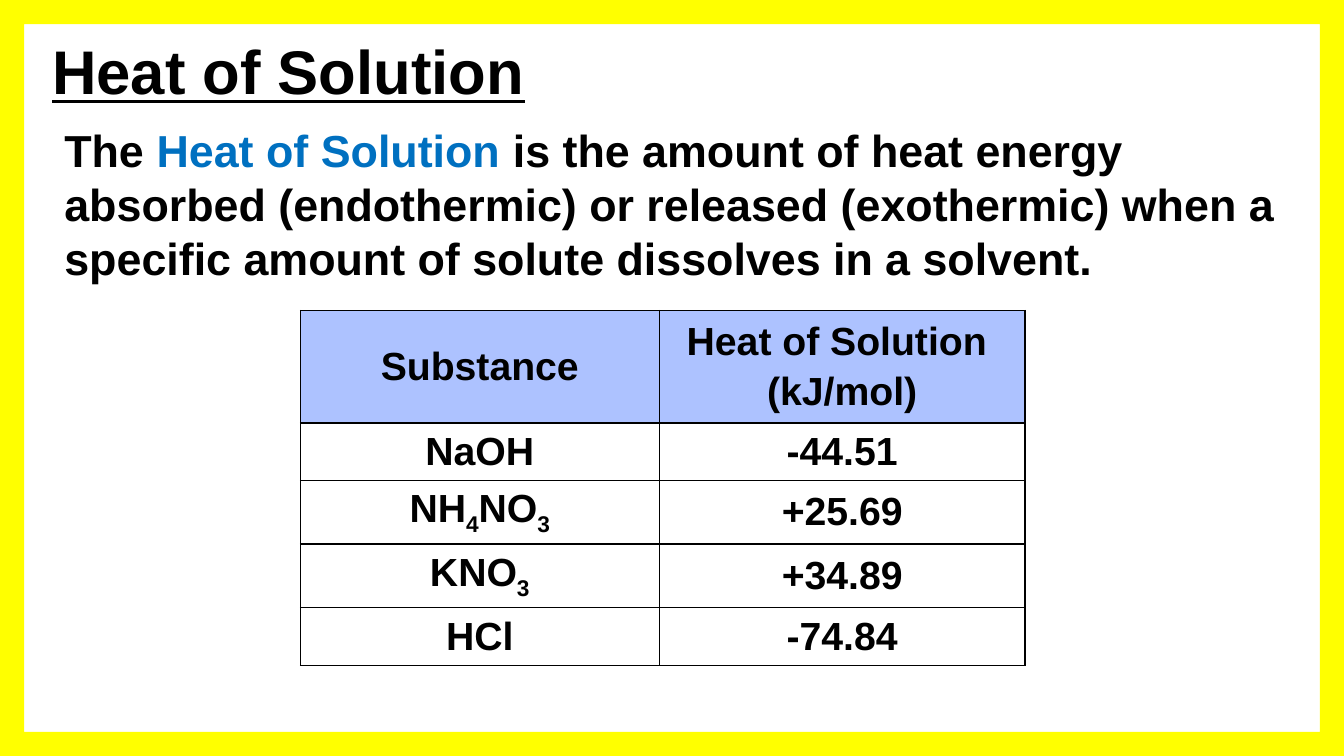
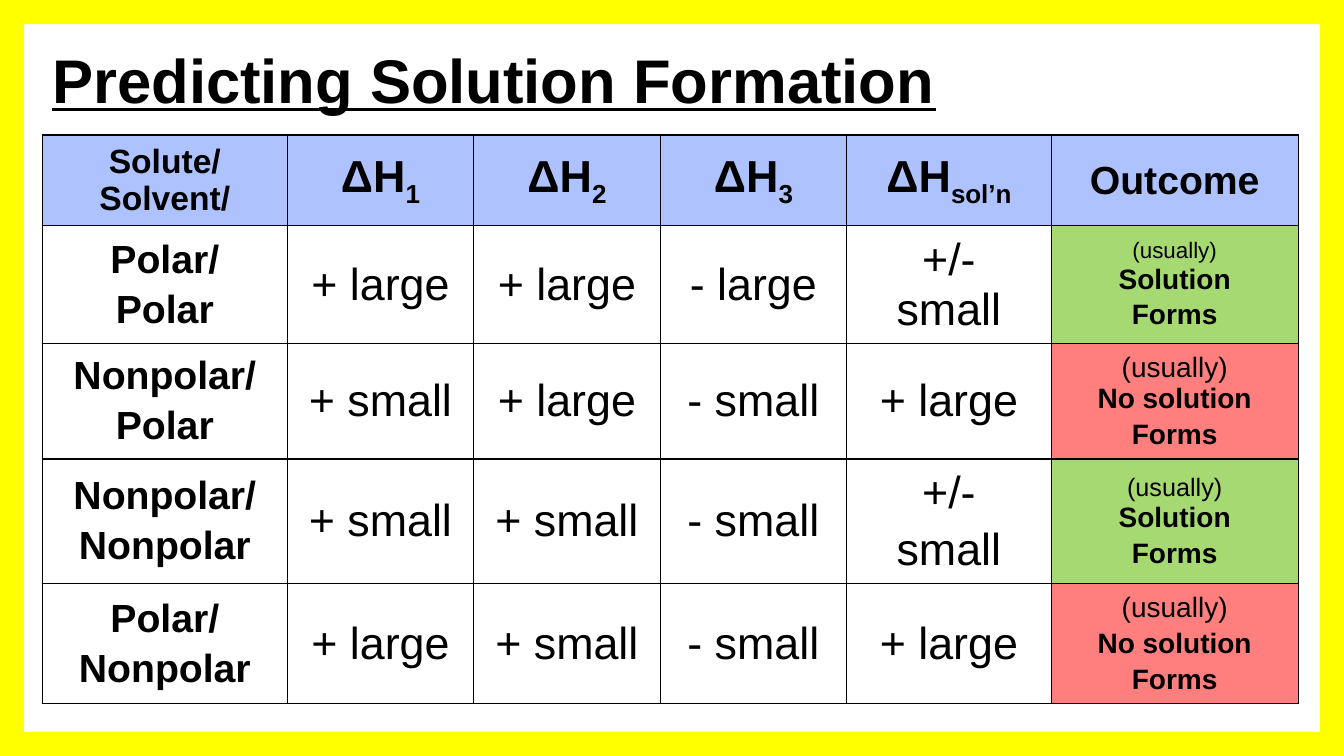
from dataclasses import dataclass
from typing import Optional

from lxml.etree import SubElement
from pptx import Presentation
from pptx.dml.color import RGBColor
from pptx.enum.shapes import MSO_SHAPE
from pptx.enum.text import MSO_ANCHOR, PP_ALIGN
from pptx.oxml import parse_xml
from pptx.oxml.ns import nsdecls, qn
from pptx.util import Inches, Pt

COLORS = {
    "paper": "FFFFFF",
    "frame": "FFFF00",
    "ink": "000000",
    "term": "0070C0",
    "header": "ADC2FF",
    "forms": "92D050",
    "fails": "FF0000",
}
FONT = "Arial"
SLIDE_WIDTH, SLIDE_HEIGHT = Inches(13.333), Inches(7.5)
GRID_COLUMNS, GRID_ROWS = 80, 45
FRAME_SHARE = 0.032
SPACING_SHARE = 0.16


@dataclass(frozen=True)
class Area:
    """A rectangle in grid columns and rows."""
    left: float
    top: float
    width: float
    height: float


@dataclass(frozen=True)
class Span:
    """Text with its own look; underscores enclose subscripts."""
    text: str
    size: Optional[float] = None
    bold: Optional[bool] = None
    color: Optional[str] = None


@dataclass(frozen=True)
class Cell:
    """A table cell made of paragraphs, each a tuple of spans."""
    paragraphs: tuple
    size: float = 28
    bold: bool = True
    fill: Optional[str] = None
    opacity: int = 100


@dataclass(frozen=True)
class Grid:
    """A table's place, column widths, row heights and cells."""
    left: float
    top: float
    widths: tuple
    heights: tuple
    rows: list


def across(columns: float) -> int:
    """Turn grid columns into a length."""
    return round(SLIDE_WIDTH * columns / GRID_COLUMNS)


def down(rows: float) -> int:
    """Turn grid rows into a length."""
    return round(SLIDE_HEIGHT * rows / GRID_ROWS)


def rgb(name: str) -> RGBColor:
    """Look up a named colour."""
    return RGBColor.from_string(COLORS[name])


def label(*lines: str, size: float = 28, bold: bool = True,
          fill: Optional[str] = None) -> Cell:
    """Make a cell with one plain paragraph per line."""
    return Cell(tuple((Span(line),) for line in lines), size, bold, fill)


def outcome(forms: bool, usually_size: float, separate: bool = False) -> Cell:
    """Make a coloured verdict cell."""
    verdict = Span("Solution" if forms else "No solution")
    if separate:
        opening = ((Span("(usually)", usually_size, False),), (verdict,))
    else:
        opening = ((Span("(usually)\n", usually_size, False), verdict),)
    return Cell(opening + ((Span("Forms"),),), 20,
                fill="forms" if forms else "fails", opacity=80 if forms else 50)


def style_paragraph(paragraph, size: float, bold: bool = True) -> None:
    """Set the font shared by a paragraph's runs."""
    font = paragraph.font
    font.name, font.size, font.bold = FONT, Pt(size), bold
    font.color.rgb = rgb("ink")


def add_span(paragraph, span: Span) -> None:
    """Write a span with its line breaks and subscripts."""
    for line_number, line in enumerate(span.text.split("\n")):
        if line_number:
            paragraph.add_line_break()
        for position, piece in enumerate(line.split("_")):
            if not piece:
                continue
            run = paragraph.add_run()
            run.text = piece
            if span.size is not None:
                run.font.size = Pt(span.size)
            if span.bold is not None:
                run.font.bold = span.bold
            if span.color is not None:
                run.font.color.rgb = rgb(span.color)
            if position % 2:
                run._r.get_or_add_rPr().set("baseline", "-25000")


def add_text(slide, area: Area, spans: tuple, size: float,
             anchor: MSO_ANCHOR = MSO_ANCHOR.TOP, underline: bool = False) -> None:
    """Add a wrapped one-paragraph text box."""
    box = slide.shapes.add_textbox(across(area.left), down(area.top),
                                   across(area.width), down(area.height))
    box.text_frame.word_wrap = True
    box.text_frame.vertical_anchor = anchor
    paragraph = box.text_frame.paragraphs[0]
    style_paragraph(paragraph, size)
    paragraph.font.underline = underline
    for span in spans:
        add_span(paragraph, span)


def add_borders(cell) -> None:
    """Draw a thin line on all four sides of a cell."""
    properties = cell._tc.get_or_add_tcPr()
    for order, side in enumerate(("lnL", "lnR", "lnT", "lnB")):
        properties.insert(order, parse_xml(
            f'<a:{side} {nsdecls("a")} w="12700"><a:solidFill>'
            f'<a:srgbClr val="{COLORS["ink"]}"/></a:solidFill></a:{side}>'))


def fill_cell(cell, content: Cell) -> None:
    """Give a table cell its text, fill and borders."""
    cell.vertical_anchor = MSO_ANCHOR.MIDDLE
    frame = cell.text_frame
    for number, spans in enumerate(content.paragraphs):
        paragraph = frame.add_paragraph() if number else frame.paragraphs[0]
        style_paragraph(paragraph, content.size, content.bold)
        paragraph.alignment = PP_ALIGN.CENTER
        paragraph.space_before = Pt(content.size * SPACING_SHARE)
        for span in spans:
            add_span(paragraph, span)
    if content.fill is None:
        cell.fill.background()
    else:
        cell.fill.solid()
        cell.fill.fore_color.rgb = rgb(content.fill)
    if content.opacity < 100:
        color = next(cell._tc.tcPr.iter(qn("a:srgbClr")))
        SubElement(color, qn("a:alpha")).set("val", str(content.opacity * 1000))
    add_borders(cell)


def add_grid(slide, grid: Grid) -> None:
    """Add a bordered table."""
    table = slide.shapes.add_table(
        len(grid.heights), len(grid.widths), across(grid.left), down(grid.top),
        across(sum(grid.widths)), down(sum(grid.heights))).table
    table.first_row = table.horz_banding = False
    for column, width in zip(table.columns, grid.widths):
        column.width = across(width)
    for row, height, contents in zip(table.rows, grid.heights, grid.rows):
        row.height = down(height)
        for cell, content in zip(row.cells, contents):
            fill_cell(cell, content)


def add_page(deck):
    """Add a blank white slide."""
    slide = deck.slides.add_slide(deck.slide_layouts[6])
    slide.background.fill.solid()
    slide.background.fill.fore_color.rgb = rgb("paper")
    return slide


def finish_page(slide, title: str, area: Area) -> None:
    """Add the underlined title and the surrounding frame."""
    add_text(slide, area, (Span(title),), 44, MSO_ANCHOR.MIDDLE, underline=True)
    frame = slide.shapes.add_shape(MSO_SHAPE.FRAME, 0, 0, SLIDE_WIDTH, SLIDE_HEIGHT)
    frame.adjustments[0] = FRAME_SHARE
    frame.shadow.inherit = False
    frame.fill.solid()
    frame.fill.fore_color.rgb = rgb("frame")
    frame.line.fill.background()


def build_heat_slide(deck) -> None:
    """Define the heat of solution and list examples."""
    slide = add_page(deck)
    add_text(slide, Area(3.24, 7.02, 73.5, 10.32), (
        Span("The "),
        Span("Heat of Solution ", color="term"),
        Span("is the amount of heat energy absorbed (endothermic) or released "
             "(exothermic) when a specific amount of solute dissolves in a solvent."),
    ), 32)
    heats = (("NaOH", "-44.51"), ("NH_4_NO_3", "+25.69"),
             ("KNO_3", "+34.89"), ("HCl", "-74.84"))
    header = [label("Substance", fill="header"),
              label("Heat of Solution ", "(kJ/mol)", fill="header")]
    rows = [[label(substance), label(heat)] for substance, heat in heats]
    add_grid(slide, Grid(17.88, 18.48, (21.36, 21.78),
                         (6.7, 3.42, 3.78, 3.78, 3.42), [header] + rows))
    finish_page(slide, "Heat of Solution", Area(2.52, 1.32, 62.34, 5.7))


def build_prediction_slide(deck) -> None:
    """Show which solute and solvent pairs form solutions."""
    slide = add_page(deck)
    header = [label("Solute/\nSolvent/", size=24, fill="header")]
    header += [label(f"ΔH_{step}", size=32, fill="header")
               for step in ("1", "2", "3", "sol’n")]
    header.append(label("Outcome", fill="header"))
    predictions = (
        (("Polar/", "Polar"), ("+ large", "+ large", "- large"),
         ("+/-\nsmall",), outcome(True, 16)),
        (("Nonpolar/", "Polar"), ("+ small", "+ large", "- small"),
         ("+ large",), outcome(False, 20)),
        (("Nonpolar/", "Nonpolar"), ("+ small", "+ small", "- small"),
         ("+/-", "small"), outcome(True, 18)),
        (("Polar/", "Nonpolar"), ("+ large", "+ small", "- small"),
         ("+ large",), outcome(False, 20, separate=True)),
    )
    rows = [[label(*pair), *(label(step, size=32, bold=False) for step in steps),
             label(*total, size=32, bold=False), verdict]
            for pair, steps, total, verdict in predictions]
    add_grid(slide, Grid(2.52, 8.04, (14.58, 11.1, 11.1, 11.1, 12.18, 14.7),
                         (5.34, 6.6, 6.54, 7.14, 6.84), [header] + rows))
    finish_page(slide, "Predicting Solution Formation", Area(2.52, 1.32, 76.2, 6.72))


def main() -> None:
    """Build and save the presentation."""
    deck = Presentation()
    deck.slide_width, deck.slide_height = SLIDE_WIDTH, SLIDE_HEIGHT
    build_heat_slide(deck)
    build_prediction_slide(deck)
    deck.save("out.pptx")


if __name__ == "__main__":
    main()
